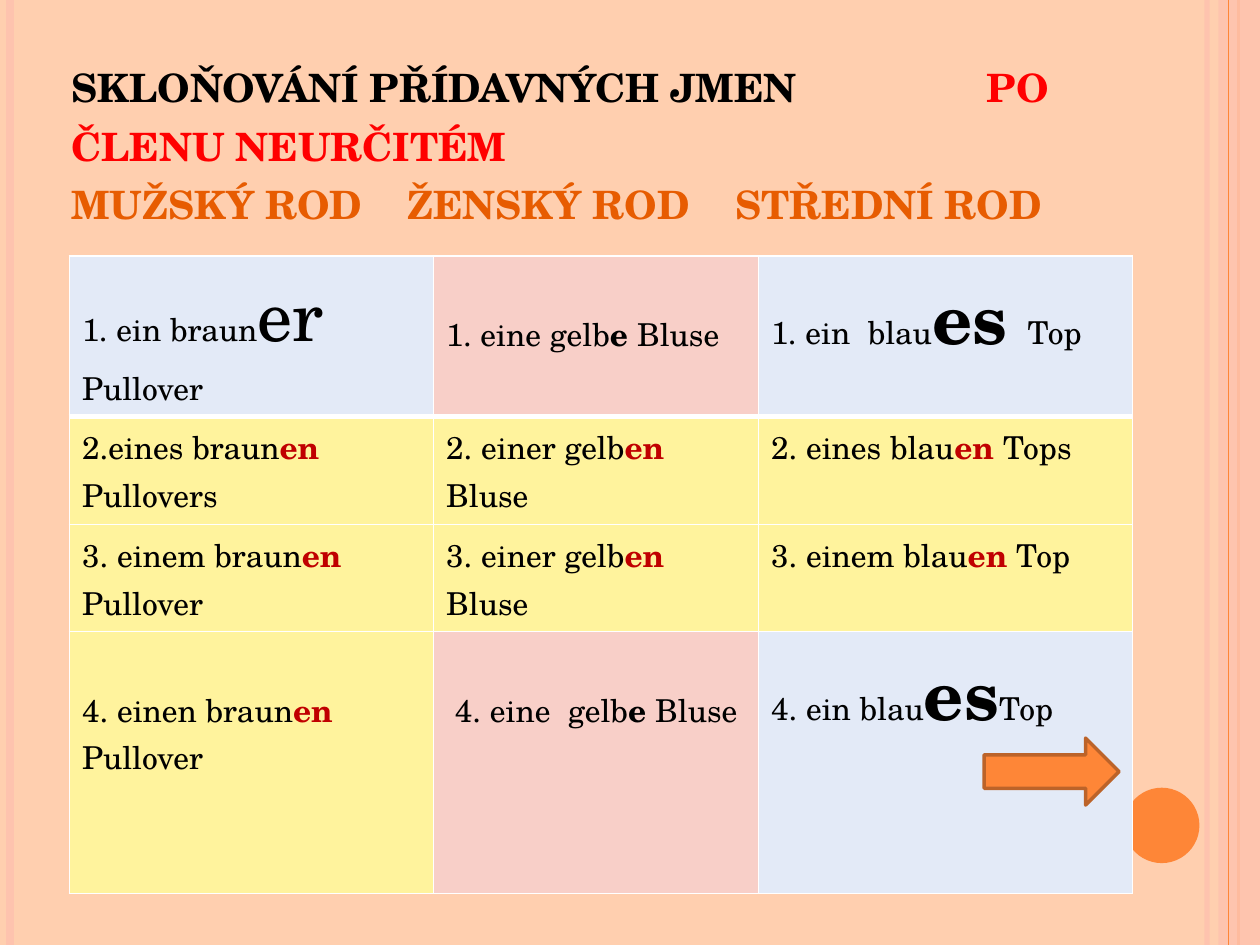
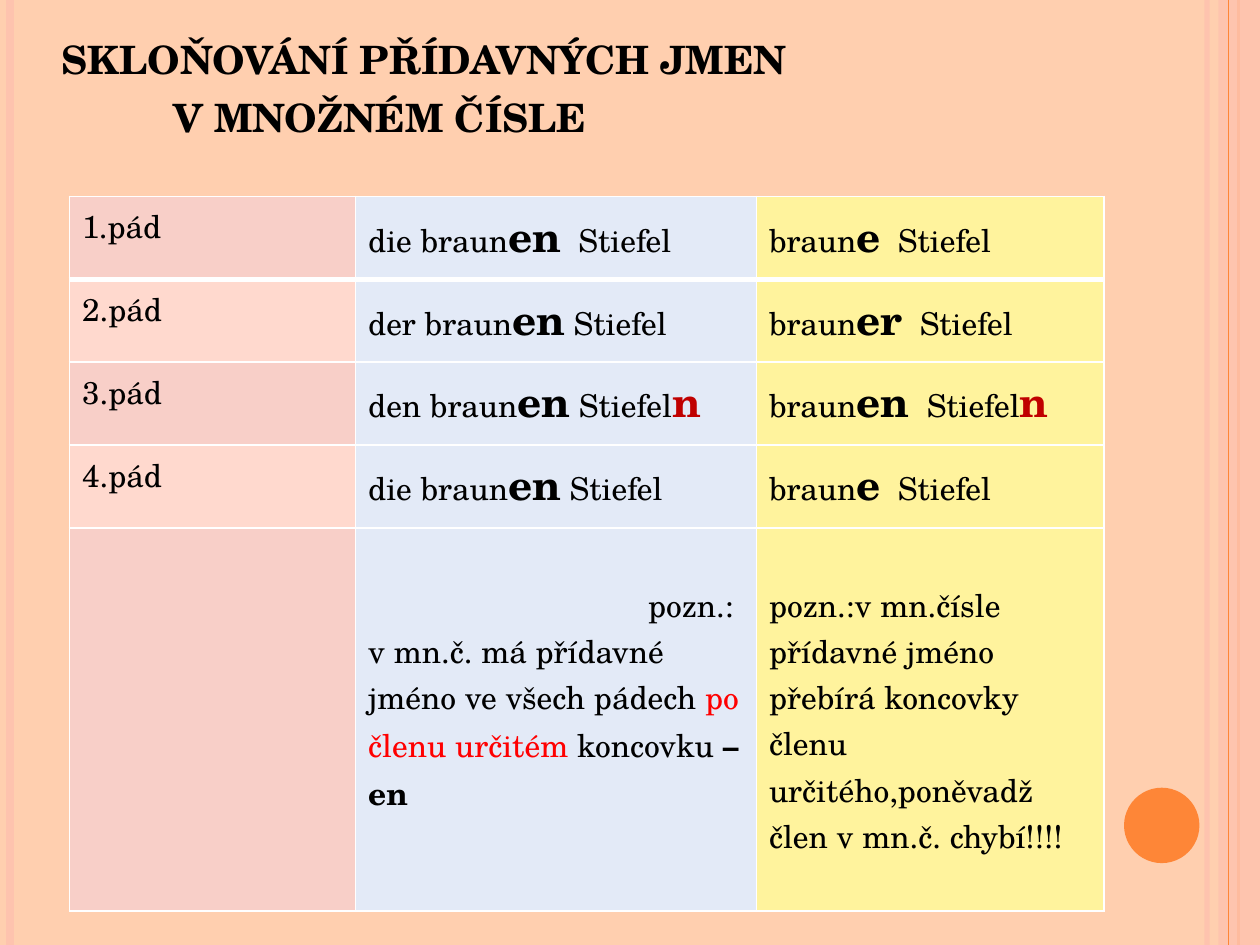
import pptx
import pptx.dml.color
import pptx.enum.shapes
import pptx.enum.text
import pptx.oxml.ns
import pptx.util
from lxml import etree

Cm, Pt = pptx.util.Cm, pptx.util.Pt
SHAPES = pptx.enum.shapes.MSO_SHAPE
qn = pptx.oxml.ns.qn

FONT = "TeX Gyre Schola"
COLORS = {
    "peach": "FFCFAF", "pink": "FEC3AE", "orange": "FE8637", "rust": "BC6329",
    "black": "000000", "white": "FFFFFF", "red": "FF0000", "dark_red": "C00000",
    "amber": "E75C01", "blue": "E3EAF7", "rose": "F8CFC8", "light_rose": "FFD9CE",
    "yellow": "FFF39D",
}
# Run styles: size, bold, colour
STYLES = {
    "plain": (18, False, "black"),
    "bold": (18, True, "black"),
    "ending": (18, True, "dark_red"),
    "note": (18, False, "red"),
    "large": (24, True, "black"),
    "large_red": (24, True, "dark_red"),
    "gap": (24, False, "black"),
    "huge": (40, True, "black"),
    "huge_light": (40, False, "black"),
    "title": (27.9, True, "black"),
    "title_red": (27.9, True, "red"),
    "title_amber": (27.9, True, "amber"),
}
CELL_TOP = 0.13
LINE_DROP = 0.95  # one text line lower in the cell


def rgb(name):
    return pptx.dml.color.RGBColor.from_string(COLORS[name])


def set_opacity(fill_parent, percent):
    color = fill_parent.find(".//" + qn("a:srgbClr"))
    etree.SubElement(color, qn("a:alpha"), val=str(percent * 1000))


class Deck:
    def __init__(self):
        self.prs = pptx.Presentation()
        self.prs.slide_width, self.prs.slide_height = Cm(25.4), Cm(19.05)
        self.slide = None

    def new_slide(self):
        self.slide = self.prs.slides.add_slide(self.prs.slide_layouts[6])
        background = self.slide.background.fill
        background.solid()
        background.fore_color.rgb = rgb("peach")
        # Side bands and the round badge
        self.vertical(24.33, "pink", 3, opacity=93)
        self.vertical(0.2, "pink", 4.5)
        self.vertical(24.97, "orange", 1.5)
        band = self.shape(SHAPES.RECTANGLE, 24.56, 0, 0.84, 19.05, "pink")
        set_opacity(band.fill._xPr.find(qn("a:solidFill")), 87)
        self.vertical(24.77, "orange", 0.75)
        self.shape(SHAPES.OVAL, 22.66, 15.88, 1.52, 1.52, "orange")

    def vertical(self, x, color, width, opacity=None):
        line = self.slide.shapes.add_connector(
            pptx.enum.shapes.MSO_CONNECTOR.STRAIGHT, Cm(x), 0, Cm(x), Cm(19.05))
        line.line.color.rgb = rgb(color)
        line.line.width = Pt(width)
        properties = line._element.spPr
        etree.SubElement(properties, qn("a:effectLst"))
        if opacity:
            set_opacity(properties, opacity)

    def shape(self, kind, left, top, width, height, fill, outline=None):
        shape = self.slide.shapes.add_shape(kind, Cm(left), Cm(top), Cm(width), Cm(height))
        shape.shadow.inherit = False
        shape.fill.solid()
        shape.fill.fore_color.rgb = rgb(fill)
        if outline:
            shape.line.color.rgb = rgb(outline)
            shape.line.width = Pt(2)
        else:
            shape.line.fill.background()
        return shape

    def runs(self, paragraph, parts):
        for text, style in parts:
            run = paragraph.add_run()
            run.text = text
            size, bold, color = STYLES[style]
            run.font.name, run.font.size, run.font.bold = FONT, Pt(size), bold
            run.font.color.rgb = rgb(color)
            if style.startswith("title"):
                run._r.get_or_add_rPr().set("cap", "small")

    def title(self, left, top, width, height, lines):
        """Each line is (indent, tab stops, runs)."""
        box = self.slide.shapes.add_textbox(Cm(left), Cm(top), Cm(width), Cm(height))
        frame = box.text_frame
        frame.word_wrap = True
        frame.vertical_anchor = pptx.enum.text.MSO_ANCHOR.BOTTOM
        for number, (indent, tabs, parts) in enumerate(lines):
            paragraph = frame.add_paragraph() if number else frame.paragraphs[0]
            properties = paragraph._p.get_or_add_pPr()
            properties.set("marL", str(Cm(indent)))
            if tabs:
                stops = etree.SubElement(properties, qn("a:tabLst"))
                for stop in tabs:
                    etree.SubElement(stops, qn("a:tab"), pos=str(Cm(stop)), algn="l")
            self.runs(paragraph, parts)

    def borders(self, cell, row):
        properties = cell._tc.get_or_add_tcPr()
        widths = {"lnL": 1, "lnR": 1, "lnT": 3 if row == 1 else 1, "lnB": 1 if row else 3}
        for side, width in widths.items():
            line = etree.SubElement(properties, qn("a:" + side), w=str(Pt(width)))
            fill = etree.SubElement(line, qn("a:solidFill"))
            etree.SubElement(fill, qn("a:srgbClr"), val=COLORS["white"])

    def table(self, left, top, widths, heights, rows, lowered=()):
        """Each cell is (fill, runs); lowered cells start one line down."""
        table = self.slide.shapes.add_table(
            len(heights), len(widths), Cm(left), Cm(top),
            Cm(sum(widths)), Cm(sum(heights))).table
        table.first_row = table.horz_banding = False
        for column, width in zip(table.columns, widths):
            column.width = Cm(width)
        for r, (height, row) in enumerate(zip(heights, rows)):
            table.rows[r].height = Cm(height)
            for c, (fill, parts) in enumerate(row):
                cell = table.cell(r, c)
                self.borders(cell, r)
                cell.fill.solid()
                cell.fill.fore_color.rgb = rgb(fill)
                cell.margin_top = Cm(CELL_TOP + LINE_DROP * ((r, c) in lowered))
                self.runs(cell.text_frame.paragraphs[0], parts)
        return table


def declined(fill, stem, ending, noun, style="ending"):
    return fill, [(stem, "plain"), (ending, style), (noun, "plain")]


def singular_slide(deck):
    deck.new_slide()
    deck.title(1.19, 0.58, 20.83, 4.17, [
        (0, [18.45], [("skloňování přídavných jmen\t", "title"), ("po", "title_red")]),
        (0, [], [("členu neurčitém", "title_red")]),
        (0, [6.77, 13.39], [("mužský rod\tženský rod\tstřední rod", "title_amber")]),
    ])
    rows = [
        [declined("blue", "1. ein braun", "er ", "Pullover", "huge_light"),
         declined("rose", "1. eine gelb", "e ", "Bluse", "bold"),
         ("blue", [("1. ein  blau", "plain"), ("es", "huge"),
                   (" ", "gap"), (" Top", "plain")])],
        [declined("yellow", "2.eines braun", "en ", "Pullovers"),
         declined("yellow", "2. einer gelb", "en ", "Bluse"),
         declined("yellow", "2. eines blau", "en ", "Tops")],
        [declined("yellow", "3. einem braun", "en ", "Pullover"),
         declined("yellow", "3. einer gelb", "en ", "Bluse"),
         declined("yellow", "3. einem blau", "en", " Top")],
        [declined("yellow", "4. einen braun", "en ", "Pullover"),
         declined("rose", " 4. eine  gelb", "e ", "Bluse", "bold"),
         declined("blue", "4. ein blau", "es", "Top", "huge")],
    ]
    deck.table(1.4, 5.16, [7.34, 6.55, 7.54], [3.23, 2.18, 2.16, 5.28], rows,
               lowered={(0, 1), (3, 0), (3, 1)})
    deck.shape(SHAPES.RIGHT_ARROW, 19.84, 14.88, 2.72, 1.35, "orange", "rust")


def plural_slide(deck):
    deck.new_slide()
    deck.title(0.99, 0.99, 20.75, 2.01, [
        (0, [], [("skloňování přídavných jmen", "title")]),
        (2.26, [], [("v množném čísle", "title")]),
    ])
    # Article, noun after it, ending without article, final letter of the noun
    cases = [("die", "  Stiefel", "e", ""), ("der", " Stiefel", "er", ""),
             ("den", " Stiefel", "en", "n"), ("die", " Stiefel", "e", "")]
    rows = []
    for number, (article, noun, ending, final) in enumerate(cases, 1):
        with_article = declined("blue", article + " braun", "en", noun, "large")
        without_article = declined("yellow", "braun", ending, "  Stiefel", "large")
        if final:
            for _, parts in (with_article, without_article):
                parts.append((final, "large_red"))
        case_fill = "rose" if number % 2 else "light_rose"
        rows.append([(case_fill, [(f"{number}.pád", "plain")]),
                     with_article, without_article])
    rows.append([
        ("rose", []),
        ("blue", [("pozn.: v mn.č. má přídavné jméno ve všech pádech ", "plain"),
                  ("po členu určitém ", "note"), ("koncovku ", "plain"), ("–en", "bold")]),
        ("yellow", [("pozn.:v mn.čísle přídavné jméno přebírá koncovky členu "
                     "určitého,poněvadž člen v mn.č. chybí!!!!", "plain")]),
    ])
    table = deck.table(1.4, 3.96, [5.77, 8.08, 7.01], [1.67] * 4 + [7.72], rows,
                       lowered={(4, 1), (4, 2)})
    # The note opens at the right end of its first line
    note = table.cell(4, 1).text_frame.paragraphs[0]
    note._p.get_or_add_pPr().set("indent", str(Cm(5.64)))


def main():
    deck = Deck()
    singular_slide(deck)
    plural_slide(deck)
    deck.prs.save("out.pptx")


if __name__ == "__main__":
    main()
